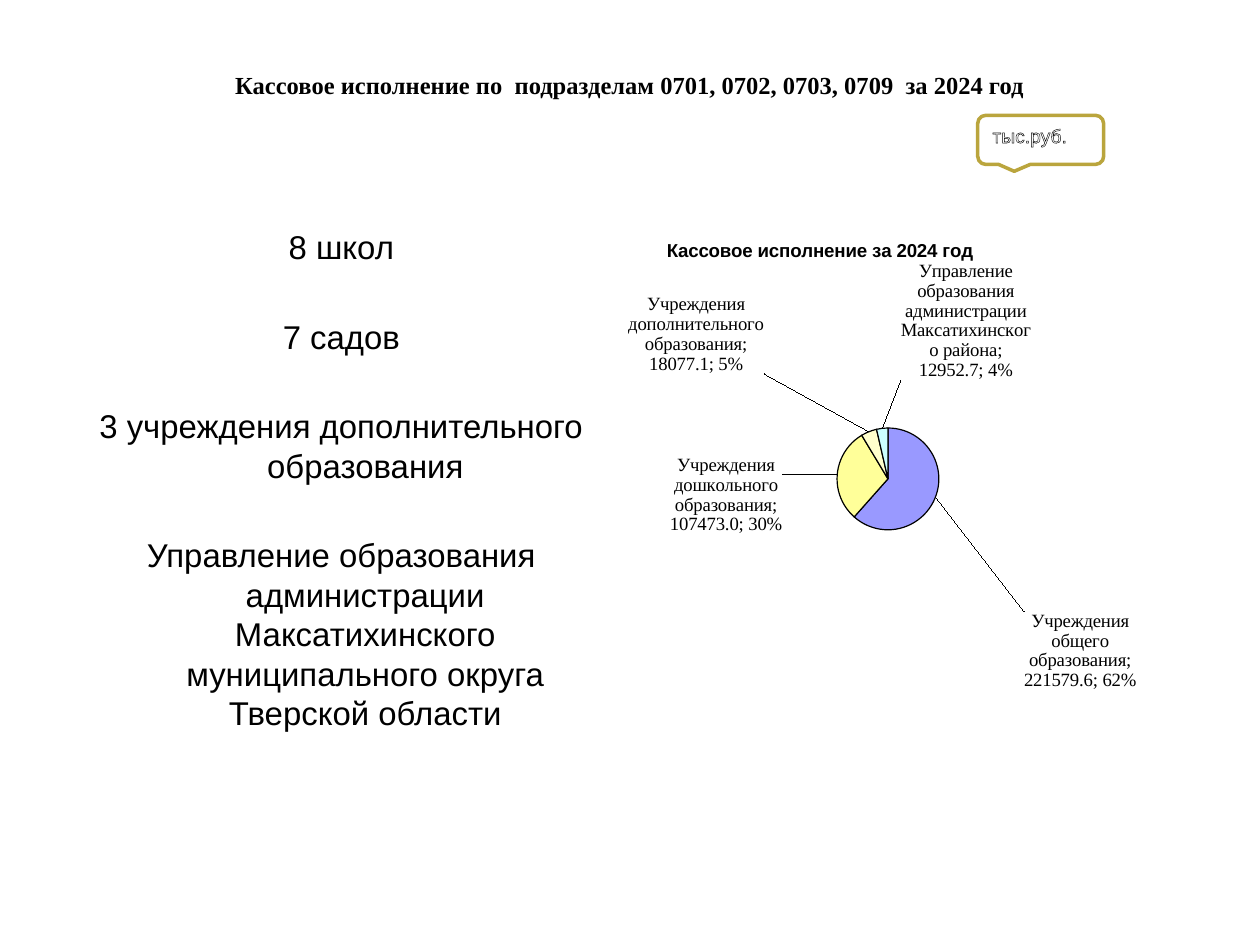
from pptx import Presentation, util as u
from pptx.chart import data as cd
from pptx.dml import color
from pptx.enum import chart as ce, shapes, text
from pptx.oxml import parse_xml, ns

NS = ns.nsdecls("c", "a")


def ink(code):
    return color.RGBColor.from_string(code)


def style(font, face, size, code, bold=False):
    font.name, font.size, font.bold = face, u.Pt(size), bold
    font.color.rgb = ink(code)


deck = Presentation()
deck.slide_width, deck.slide_height = u.Inches(10), u.Inches(7.5)
wide, high = deck.slide_width, deck.slide_height
page = deck.slides.add_slide(deck.slide_layouts[1])

head, body = page.placeholders
head.left, head.top = int(wide * 0.05), int(high * 0.04)
head.width, head.height = int(wide * 0.9), int(high * 0.1)
frame = head.text_frame
frame.text = "Кассовое исполнение по  подразделам 0701, 0702, 0703, 0709  за 2024 год"
frame.vertical_anchor = text.MSO_ANCHOR.MIDDLE
frame.paragraphs[0].alignment = text.PP_ALIGN.CENTER
style(frame.paragraphs[0].runs[0].font, "Times New Roman", 14, "000000", True)

body.left, body.top = int(wide * 0.05), int(high * 0.233)
body.width, body.height = int(wide * 0.442), int(high * 0.66)
frame = body.text_frame
frame.text = "\n".join([
    "8 школ",
    "7 садов",
    "3 учреждения дополнительного образования",
    "Управление образования администрации Максатихинского муниципального округа Тверской области",
])
frame.auto_size = text.MSO_AUTO_SIZE.NONE
for row, para in enumerate(frame.paragraphs):
    para.alignment = text.PP_ALIGN.CENTER
    para.space_before = u.Pt(28.7 if row else 0)
    props = para._p.get_or_add_pPr()
    props.set("marL", str(u.Inches(0.38)))
    props.set("indent", str(u.Inches(-0.38)))
    props.append(parse_xml(f"<a:buNone {NS}/>"))
    style(para.runs[0].font, "Arial", 18.8, "000000")

parts = [
    ("Учреждения общего образования", 221579.6, "9999FF", 0.12, 0.22),
    ("Учреждения дошкольного образования", 107473.0, "FFFF99", -0.07, 0.12),
    ("Учреждения дополнительного образования", 18077.1, "FFFFCC", -0.15, -0.1),
    ("Управление образования администрации Максатихинского района", 12952.7, "CCFFFF", 0.22, -0.08),
]
data = cd.CategoryChartData(number_format="0.0")
data.categories = [part[0] for part in parts]
data.add_series("Series 1", [part[1] for part in parts])
chart = page.shapes.add_chart(
    ce.XL_CHART_TYPE.PIE, int(wide * 0.451), int(high * 0.232),
    int(wide * 0.54), int(high * 0.539), data).chart
chart.has_legend = False
style(chart.font, "Arial", 8, "000000")

chart.has_title = True
title = chart.chart_title
title.text_frame.text = "Кассовое исполнение за 2024 год"
style(title.text_frame.paragraphs[0].runs[0].font, "Arial", 10.7, "000000", True)
title.include_in_layout = False


def layout(x, y, mode="", size=""):
    return (f"<c:layout {NS}><c:manualLayout>{mode}"
            f'<c:x val="{x}"/><c:y val="{y}"/>{size}</c:manualLayout></c:layout>')


edge = '<c:xMode val="edge"/><c:yMode val="edge"/>'
size = '<c:w val="0.38"/><c:h val="0.2"/>'
spots = [
    (title._element, "c:tx", layout(0.14, 0.03, edge)),
    (chart._chartSpace.chart.plotArea, None,
     layout(0.28, 0.41, '<c:layoutTarget val="inner"/>' + edge, size)),
]
for node, prior, xml in spots:
    for old in node.findall(ns.qn("c:layout")):
        node.remove(old)
    if prior:
        node.find(ns.qn(prior)).addnext(parse_xml(xml))
    else:
        node.insert(0, parse_xml(xml))

plot = chart.plots[0]
plot.vary_by_categories = True
ring = plot.series[0]
shows = "".join(
    f'<c:{name} val="{flag}"/>' for name, flag in [
        ("showLegendKey", 0), ("showVal", 1), ("showCatName", 1),
        ("showSerName", 0), ("showPercent", 1), ("showBubbleSize", 0)])
look = (
    '<c:numFmt formatCode="0%" sourceLinked="0"/><c:spPr><a:noFill/><a:ln><a:noFill/></a:ln></c:spPr>'
    '<c:txPr><a:bodyPr/><a:p><a:pPr><a:defRPr sz="1070" b="0">'
    '<a:solidFill><a:srgbClr val="000000"/></a:solidFill><a:latin typeface="Times New Roman"/>'
    '</a:defRPr></a:pPr><a:endParaRPr lang="ru-RU"/></a:p></c:txPr>'
    f'<c:dLblPos val="outEnd"/>{shows}<c:separator>; </c:separator>')
notes = ""
for spot, (name, value, tint, x, y) in enumerate(parts):
    slice = ring.points[spot].format
    slice.fill.solid()
    slice.fill.fore_color.rgb = ink(tint)
    slice.line.color.rgb = ink("000000")
    slice.line.width = u.Pt(0.67)
    notes += f'<c:dLbl><c:idx val="{spot}"/>{layout(x, y)}{look}</c:dLbl>'
ring._element.find(ns.qn("c:cat")).addprevious(parse_xml(
    f'<c:dLbls {NS}>{notes}{look}<c:showLeaderLines val="1"/></c:dLbls>'))

badge = page.shapes.add_shape(
    shapes.MSO_SHAPE.ROUNDED_RECTANGULAR_CALLOUT, int(wide * 0.776),
    int(high * 0.122), int(wide * 0.1), int(high * 0.052))
badge.shadow.inherit = False
badge.adjustments[0], badge.adjustments[1] = -0.21, 0.64
badge.fill.solid()
badge.fill.fore_color.rgb = ink("FFFFFF")
badge.line.color.rgb = ink("BAA53D")
badge.line.width = u.Pt(2)
frame = badge.text_frame
frame.text = "тыс.руб."
frame.vertical_anchor = text.MSO_ANCHOR.TOP
para = frame.paragraphs[0]
para.alignment = text.PP_ALIGN.LEFT
style(para.runs[0].font, "Arial", 11, "FFFFFF")
para.runs[0].font._element.insert(0, parse_xml(
    f'<a:ln {NS} w="{u.Pt(0.75)}"><a:solidFill><a:srgbClr val="000000"/></a:solidFill></a:ln>'))

deck.save("out.pptx")
